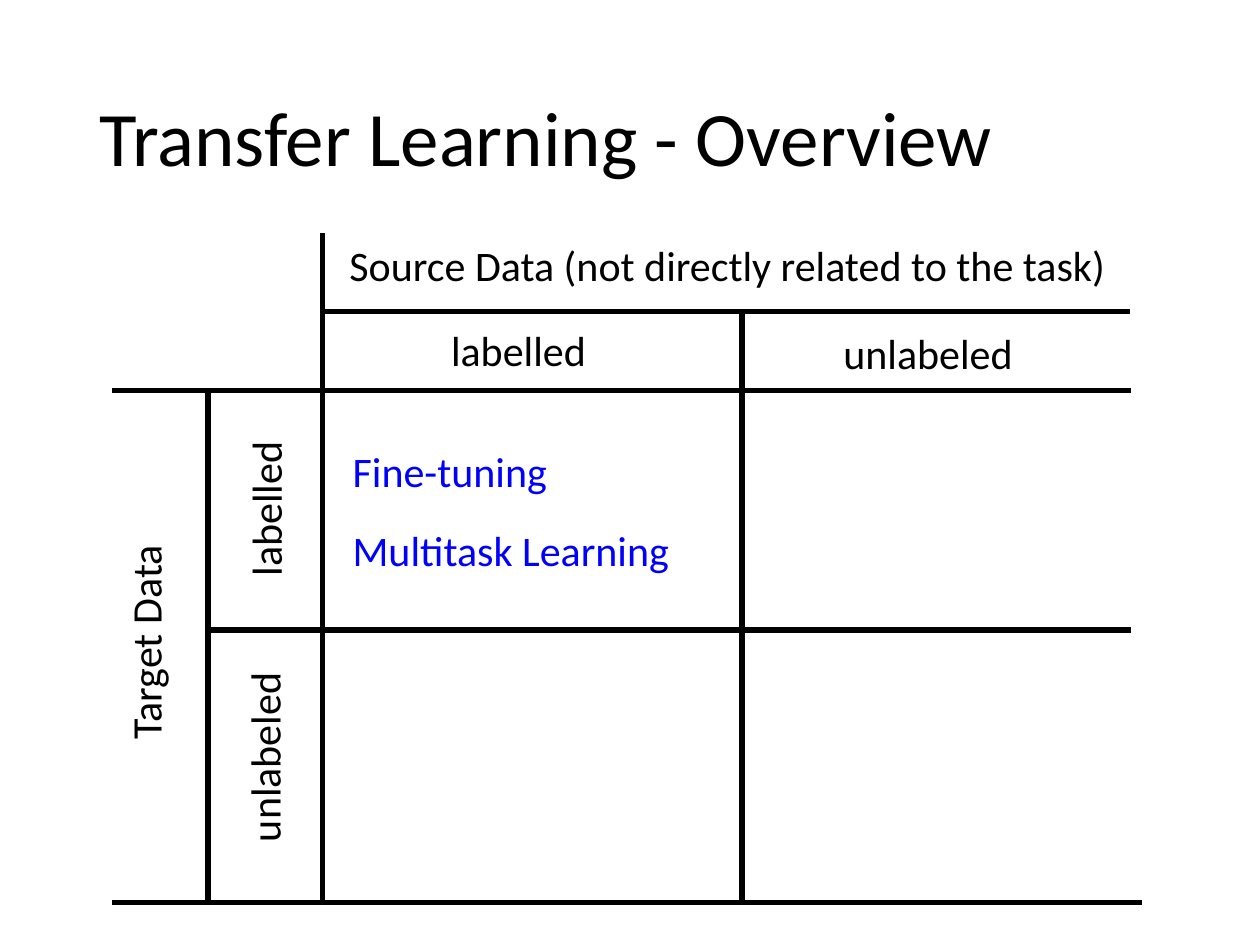
from dataclasses import dataclass

import pptx
import pptx.dml.color
import pptx.enum.shapes
import pptx.enum.text
import pptx.oxml
import pptx.oxml.ns
import pptx.util

PIXEL = 9144  # EMU, at 100 px to the inch
FONT = "Calibri"
COLORS = {"ink": "000000", "method": "0000FF", "background": "FFFFFF"}
ALIGN = pptx.enum.text.PP_ALIGN

# Grid of the matrix
LEFT, TARGET_SPLIT, HEADER_SPLIT, SOURCE_SPLIT, RIGHT = 89, 165, 256, 589, 898
TOP, SOURCE_RULE, HEADER_RULE, ROW_SPLIT, BOTTOM = 185, 247, 310, 500, 716
LABEL_WIDTH, LABEL_HEIGHT = 169, 50


@dataclass(frozen=True)
class Rule:
    x1: int
    y1: int
    x2: int
    y2: int


@dataclass(frozen=True)
class Label:
    text: str
    left: int
    top: int
    width: int = LABEL_WIDTH
    rotation: int = 0
    color: str = "ink"
    alignment: ALIGN = ALIGN.CENTER


RULES = [
    Rule(HEADER_SPLIT, BOTTOM, HEADER_SPLIT, TOP),
    Rule(LEFT, HEADER_RULE, RIGHT, HEADER_RULE),
    Rule(TARGET_SPLIT, ROW_SPLIT, RIGHT, ROW_SPLIT),
    Rule(HEADER_SPLIT, SOURCE_RULE, RIGHT - 1, SOURCE_RULE),
    Rule(SOURCE_SPLIT, SOURCE_RULE, SOURCE_SPLIT, BOTTOM),
    Rule(TARGET_SPLIT, HEADER_RULE - 2, TARGET_SPLIT, BOTTOM),
    Rule(LEFT, BOTTOM, RIGHT + 8, BOTTOM),
]

LABELS = [
    Label("Target Data ", -65, 481, width=360, rotation=270),
    Label("Source Data (not directly related to the task) ", HEADER_SPLIT, TOP, width=650),
    Label("labelled", 327, 253),
    Label("labelled", 126, 379, rotation=270),
    Label("unlabeled", 652, 255),
    Label("unlabeled", 125, 576, rotation=270),
    Label("Multitask Learning", 270, 411, width=282, color="method", alignment=ALIGN.LEFT),
    Label("Fine-tuning", 270, 349, width=282, color="method", alignment=ALIGN.LEFT),
]


def px(length: int) -> pptx.util.Emu:
    return pptx.util.Emu(length * PIXEL)


def rgb(name: str) -> pptx.dml.color.RGBColor:
    return pptx.dml.color.RGBColor.from_string(COLORS[name])


def format_runs(paragraph, size: int, color: str) -> None:
    for run in paragraph.runs:
        run.font.name = FONT
        run.font.size = pptx.util.Pt(size)
        run.font.color.rgb = rgb(color)


def set_title(slide, text: str) -> None:
    title = slide.shapes.title
    title.left, title.top, title.width, title.height = px(69), px(40), px(862), px(145)
    title.text_frame.text = text
    title.text_frame.vertical_anchor = pptx.enum.text.MSO_ANCHOR.MIDDLE
    paragraph = title.text_frame.paragraphs[0]
    paragraph.alignment = ALIGN.LEFT
    paragraph.line_spacing = 0.9
    format_runs(paragraph, 44, "ink")


def draw_rule(slide, rule: Rule) -> None:
    connector = slide.shapes.add_connector(
        pptx.enum.shapes.MSO_CONNECTOR.STRAIGHT,
        px(rule.x1), px(rule.y1), px(rule.x2), px(rule.y2),
    )
    connector.line.color.rgb = rgb("ink")
    connector.line.width = pptx.util.Pt(3)
    properties = connector._element.spPr
    properties.append(pptx.oxml.parse_xml(f"<a:effectLst {pptx.oxml.ns.nsdecls('a')}/>"))


def draw_label(slide, label: Label) -> None:
    shape = slide.shapes.add_textbox(
        px(label.left), px(label.top), px(label.width), px(LABEL_HEIGHT)
    )
    shape.rotation = label.rotation
    shape.text_frame.word_wrap = True
    shape.text_frame.auto_size = pptx.enum.text.MSO_AUTO_SIZE.SHAPE_TO_FIT_TEXT
    shape.text_frame.text = label.text
    paragraph = shape.text_frame.paragraphs[0]
    paragraph.alignment = label.alignment
    format_runs(paragraph, 24, label.color)


def main() -> None:
    presentation = pptx.Presentation()
    presentation.slide_width, presentation.slide_height = px(1000), px(750)
    slide = presentation.slides.add_slide(presentation.slide_layouts.get_by_name("Title Only"))
    slide.background.fill.solid()
    slide.background.fill.fore_color.rgb = rgb("background")
    set_title(slide, "Transfer Learning - Overview")
    for rule in RULES:
        draw_rule(slide, rule)
    for label in LABELS:
        draw_label(slide, label)
    presentation.save("out.pptx")


if __name__ == "__main__":
    main()
